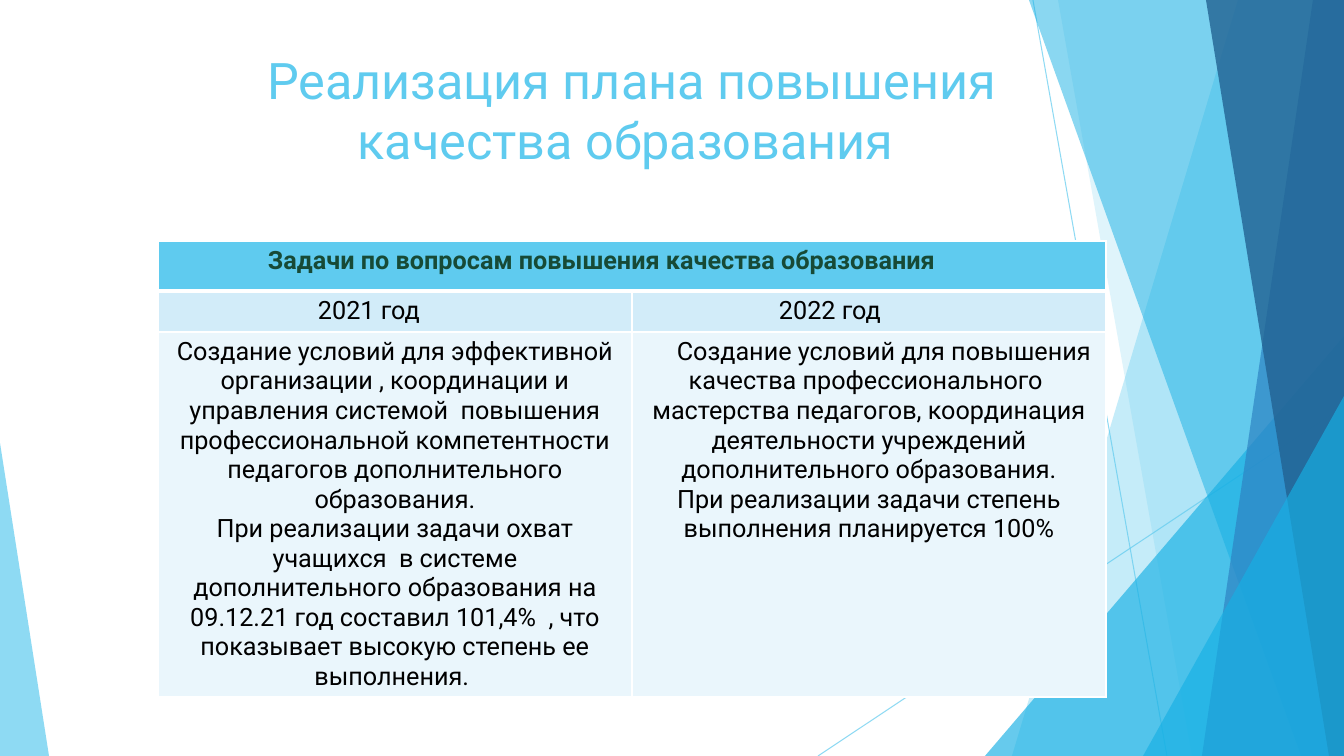
from lxml import etree
from pptx import Presentation
from pptx import util as u
from pptx.dml.color import RGBColor
from pptx.enum import shapes, text
from pptx.oxml.ns import qn

PX = 914400 / 100.8
W, H = 1344, 756
COLORS = {
    "sky": "5FCBEF", "cyan": "17B0E4", "blue": "2E83C3", "navy": "226292",
    "green": "174A36", "black": "000000", "white": "FFFFFF",
    "year_row": "D2ECF9", "task_row": "EAF6FC",
}


def write(tf, paragraphs, size=18, color="black", bold=False, align="LEFT", indent=0):
    """Fill a text frame; indent applies to the first line of the first paragraph."""
    for i, line in enumerate(paragraphs):
        p = tf.paragraphs[0] if i == 0 else tf.add_paragraph()
        p.alignment = text.PP_ALIGN[align]
        if i == 0 and indent:
            pPr = p._p.get_or_add_pPr()
            pPr.set("marL", "0")
            pPr.set("indent", str(round(indent * PX)))
        r = p.add_run()
        r.text = line
        r.font.name = "Roboto"
        r.font.size = u.Pt(size)
        r.font.bold = bold
        r.font.color.rgb = RGBColor.from_string(COLORS[color])


def paint(part, color, opacity):
    """Give a shape or connector a translucent colour and no shadow."""
    if hasattr(part, "fill"):
        part.shadow.inherit = False
        part.line.fill.background()
        part.fill.solid()
        fill = part.fill
    else:
        part.line.width = u.Pt(0.75)
        fill = part.line.fill
        fill.solid()
        etree.SubElement(part._element.spPr, qn("a:effectLst"))
    fill.fore_color.rgb = RGBColor.from_string(COLORS[color])
    clr = next(part._element.spPr.iter(qn("a:srgbClr")))
    etree.SubElement(clr, qn("a:alpha"), val=str(opacity * 1000))


prs = Presentation()
prs.slide_width, prs.slide_height = round(W * PX), round(H * PX)
s = prs.slides.add_slide(prs.slide_layouts[5])

# Background facets, back to front
facets = [
    ("line", (1033, 0, 1167, H), "sky", 70),
    ("line", (W, 406, 818, H), "sky", 70),
    ("band", (1238, 1012, W), "sky", 36),
    ("band", (1058, 1192, W), "sky", 20),
    ("triangle", (985, 336, W, 1), "cyan", 66),
    ("band", (1029, 1301, W), "cyan", 50),
    ("band", (1313, 1202, W), "blue", 70),
    ("band", (1206, 1329, W), "navy", 80),
    ("triangle", (1143, 396, W, 1), "cyan", 66),
    ("triangle", (0, 443, 49, 0), "sky", 70),
]
for kind, geometry, color, opacity in facets:
    if kind == "line":
        sp = s.shapes.add_connector(
            shapes.MSO_CONNECTOR.STRAIGHT, *[round(v * PX) for v in geometry])
    elif kind == "band":
        top_x, bottom_x, right = geometry
        fb = s.shapes.build_freeform(top_x, 0, scale=PX)
        fb.add_line_segments([(right, 0), (right, H), (bottom_x, H)], close=True)
        sp = fb.convert_to_shape()
    else:
        left, top, right, apex = geometry
        box = [round(v * PX) for v in (left, top, right - left, H - top)]
        sp = s.shapes.add_shape(shapes.MSO_SHAPE.ISOSCELES_TRIANGLE, *box)
        sp.adjustments[0] = apex
    paint(sp, color, opacity)

# Title
title = s.shapes.title
title.left, title.top, title.width, title.height = [
    round(v * PX) for v in (158, 40, 948, 145)]
tf = title.text_frame
tf.word_wrap = True
tf.auto_size = text.MSO_AUTO_SIZE.NONE
tf.vertical_anchor = text.MSO_ANCHOR.TOP
tf.margin_top = round(9 * PX)
write(tf, ["Реализация плана повышения качества образования "],
      size=36, color="sky", align="CENTER")

# Table of tasks
ROWS = [50, 41, 365]
FILLS = ["sky", "year_row", "task_row"]
table = s.shapes.add_table(
    3, 2, *[round(v * PX) for v in (158, 241, 948, sum(ROWS))]).table
for col in table.columns:
    col.width = round(474 * PX)
for row, height in zip(table.rows, ROWS):
    row.height = round(height * PX)
table.cell(0, 0).merge(table.cell(0, 1))

# Cell fills and white borders
for i, row in enumerate(table.rows):
    for cell in row.cells:
        cell.fill.solid()
        cell.fill.fore_color.rgb = RGBColor.from_string(COLORS[FILLS[i]])
        cell.vertical_anchor = text.MSO_ANCHOR.TOP
        tcPr = cell._tc.get_or_add_tcPr()
        for n, side in enumerate("LRTB"):
            thick = (i == 0 and side == "B") or (i == 1 and side == "T")
            ln = etree.Element(qn("a:ln" + side), w=str(u.Pt(3 if thick else 1)))
            fill = etree.SubElement(ln, qn("a:solidFill"))
            etree.SubElement(fill, qn("a:srgbClr"), val=COLORS["white"])
            tcPr.insert(n, ln)

# Cell text: row, column, left margin, paragraphs, format
cells = [
    (0, 0, 110, ["Задачи по вопросам повышения качества образования"],
     {"color": "green", "bold": True}),
    (1, 0, 160, ["2021 год"], {}),
    (1, 1, 147, ["2022 год"], {}),
    (2, 0, 10, [
        "Создание условий для эффективной организации , координации и управления "
        "системой  повышения профессиональной компетентности педагогов "
        "дополнительного образования.",
        "При реализации задачи охват учащихся  в системе дополнительного образования "
        "на 09.12.21 год составил 101,4%  , что показывает высокую степень ее "
        "выполнения. "], {"align": "CENTER"}),
    (2, 1, 10, [
        "Создание условий для повышения качества профессионального  мастерства "
        "педагогов, координация деятельности учреждений дополнительного образования.",
        "При реализации задачи степень выполнения планируется 100%"],
     {"align": "CENTER", "indent": 30}),
]
for i, j, margin, paragraphs, style in cells:
    cell = table.cell(i, j)
    cell.margin_left = round(margin * PX)
    write(cell.text_frame, paragraphs, **style)

prs.save("out.pptx")
